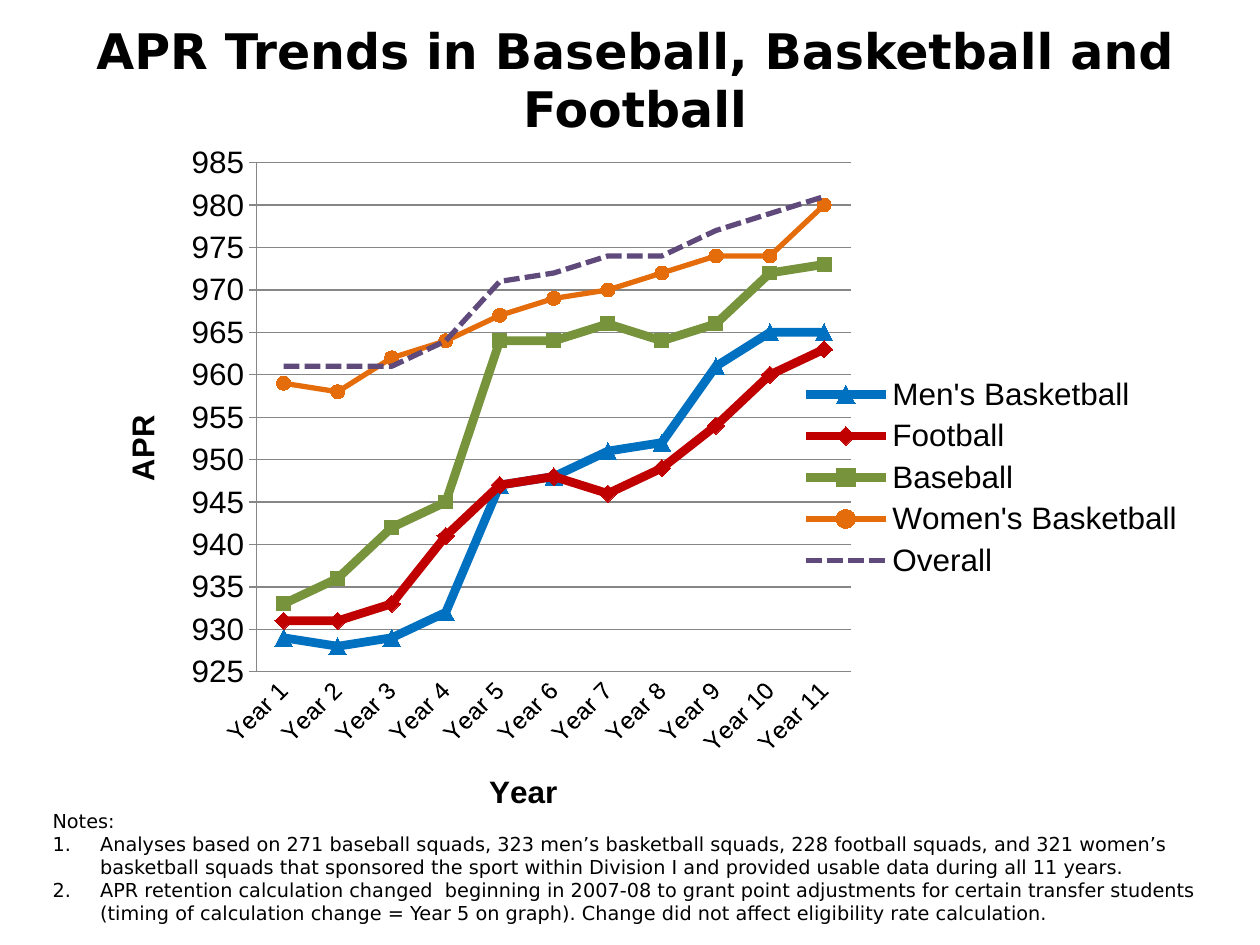
from dataclasses import dataclass

from lxml import etree
from pptx import Presentation
from pptx.chart.data import CategoryChartData
from pptx.dml.color import RGBColor
from pptx.enum.chart import XL_CHART_TYPE, XL_LEGEND_POSITION, XL_MARKER_STYLE, XL_TICK_MARK
from pptx.enum.dml import MSO_LINE
from pptx.enum.text import MSO_ANCHOR, MSO_AUTO_SIZE, PP_ALIGN
from pptx.oxml.ns import qn
from pptx.util import Cm, Pt

LINE_MARKERS = XL_CHART_TYPE.LINE_MARKERS
LEGEND_RIGHT = XL_LEGEND_POSITION.RIGHT
TRIANGLE = XL_MARKER_STYLE.TRIANGLE
DIAMOND = XL_MARKER_STYLE.DIAMOND
SQUARE = XL_MARKER_STYLE.SQUARE
CIRCLE = XL_MARKER_STYLE.CIRCLE
NO_MARKER = XL_MARKER_STYLE.NONE
TICK_NONE = XL_TICK_MARK.NONE
TICK_OUTSIDE = XL_TICK_MARK.OUTSIDE
SHORT_DASH = MSO_LINE.SQUARE_DOT
MIDDLE = MSO_ANCHOR.MIDDLE
CENTER = PP_ALIGN.CENTER
FIT_NONE = MSO_AUTO_SIZE.NONE
FIT_SHAPE = MSO_AUTO_SIZE.SHAPE_TO_FIT_TEXT


@dataclass(frozen=True)
class Theme:
    text_font: str = "DejaVu Sans"
    chart_font: str = "Arial"
    ink: str = "000000"
    grid: str = "868686"
    title_size: int = 28
    chart_size: int = 18
    category_size: int = 14
    note_size: int = 11


@dataclass(frozen=True)
class Trend:
    name: str
    values: tuple
    color: str
    width: int
    marker: XL_MARKER_STYLE
    marker_size: int = 8
    dashed: bool = False


TRENDS = [
    Trend("Men's Basketball", (929, 928, 929, 932, 947, 948, 951, 952, 961, 965, 965),
          "0070C0", 5, TRIANGLE, 10),
    Trend("Football", (931, 931, 933, 941, 947, 948, 946, 949, 954, 960, 963),
          "C00000", 5, DIAMOND, 10),
    Trend("Baseball", (933, 936, 942, 945, 964, 964, 966, 964, 966, 972, 973),
          "77933C", 5, SQUARE),
    Trend("Women's Basketball", (959, 958, 962, 964, 967, 969, 970, 972, 974, 974, 980),
          "E46C0A", 3, CIRCLE),
    Trend("Overall", (961, 961, 961, 964, 971, 972, 974, 974, 977, 979, 981),
          "604A7B", 3, NO_MARKER, dashed=True),
]
NOTES = [
    "Analyses based on 271 baseball squads, 323 men’s basketball squads, 228 football squads, "
    "and 321 women’s basketball squads that sponsored the sport within Division I and provided "
    "usable data during all 11 years.",
    "APR retention calculation changed  beginning in 2007-08 to grant point adjustments for "
    "certain transfer students (timing of calculation change = Year 5 on graph). Change did not "
    "affect eligibility rate calculation.",
]


def place_in_chart(chart, parent_query, index, **position):
    parent = chart.element.xpath(parent_query)[0]
    for old_layout in parent.findall(qn("c:layout")):
        parent.remove(old_layout)
    layout = etree.Element(qn("c:layout"))
    manual = etree.SubElement(layout, qn("c:manualLayout"))
    if parent.tag == qn("c:plotArea"):
        etree.SubElement(manual, qn("c:layoutTarget"), val="inner")
    for mode in ("xMode", "yMode"):
        etree.SubElement(manual, qn(f"c:{mode}"), val="edge")
    for name, value in position.items():
        etree.SubElement(manual, qn(f"c:{name}"), val=str(value))
    parent.insert(index, layout)


class SlideBuilder:
    def __init__(self, slide, theme):
        self.slide = slide
        self.theme = theme

    def style_font(self, font, name, size, bold=False):
        font.name = name
        font.size = Pt(size)
        font.bold = bold
        font.color.rgb = RGBColor.from_string(self.theme.ink)

    def add_title(self, text, left, top, width, height):
        title = self.slide.shapes.title
        title.left, title.top, title.width, title.height = left, top, width, height
        frame = title.text_frame
        frame.text = text
        frame.auto_size = FIT_NONE
        frame.vertical_anchor = MIDDLE
        paragraph = frame.paragraphs[0]
        paragraph.alignment = CENTER
        self.style_font(paragraph.font, self.theme.text_font, self.theme.title_size, True)

    def add_notes(self, heading, notes, left, top, width, height):
        box = self.slide.shapes.add_textbox(left, top, width, height)
        frame = box.text_frame
        frame.word_wrap = True
        frame.auto_size = FIT_SHAPE
        frame.margin_left = frame.margin_top = frame.margin_bottom = 0
        frame.margin_right = Cm(0.05)
        frame.text = "\n".join([heading, *notes])
        for number, paragraph in enumerate(frame.paragraphs):
            properties = paragraph._p.get_or_add_pPr()
            properties.set("marL", str(Cm(0.96)))
            properties.set("indent", str(-Cm(0.96)))
            if number:
                etree.SubElement(properties, qn("a:buAutoNum"), type="arabicPeriod")
            self.style_font(paragraph.font, self.theme.text_font, self.theme.note_size)

    def style_axis(self, axis, title, tick_mark, size):
        axis.major_tick_mark = tick_mark
        axis.minor_tick_mark = TICK_NONE
        axis.format.line.color.rgb = RGBColor.from_string(self.theme.grid)
        self.style_font(axis.tick_labels.font, self.theme.chart_font, size)
        frame = axis.axis_title.text_frame
        frame.text = title
        self.style_font(frame.paragraphs[0].font, self.theme.chart_font,
                        self.theme.chart_size, True)

    def style_trend(self, series, trend):
        color = RGBColor.from_string(trend.color)
        series.smooth = False
        series.format.line.color.rgb = color
        series.format.line.width = Pt(trend.width)
        if trend.dashed:
            series.format.line.dash_style = SHORT_DASH
        marker = series.marker
        marker.style = trend.marker
        if trend.marker != NO_MARKER:
            marker.size = trend.marker_size
            marker.format.fill.solid()
            marker.format.fill.fore_color.rgb = color
            marker.format.line.color.rgb = color

    def add_trend_chart(self, trends, left, top, width, height):
        data = CategoryChartData()
        data.categories = [f"Year {year}" for year in range(1, 12)]
        for trend in trends:
            data.add_series(trend.name, trend.values)
        chart = self.slide.shapes.add_chart(LINE_MARKERS, left, top, width, height, data).chart
        chart.has_title = False
        self.style_font(chart.font, self.theme.chart_font, self.theme.chart_size)
        chart.plots[0].vary_by_categories = False
        for series, trend in zip(chart.plots[0].series, trends):
            self.style_trend(series, trend)

        self.style_axis(chart.category_axis, "Year", TICK_NONE, self.theme.category_size)
        label_body = chart.element.xpath(".//c:catAx/c:txPr/a:bodyPr")[0]
        label_body.set("rot", "-2700000")
        values = chart.value_axis
        self.style_axis(values, "APR", TICK_OUTSIDE, self.theme.chart_size)
        values.minimum_scale, values.maximum_scale, values.major_unit = 925, 985, 5
        values.major_gridlines.format.line.color.rgb = RGBColor.from_string(self.theme.grid)

        chart.has_legend = True
        chart.legend.position = LEGEND_RIGHT
        chart.legend.include_in_layout = False
        self.style_font(chart.legend.font, self.theme.chart_font, self.theme.chart_size)
        place_in_chart(chart, ".//c:plotArea", 0, x=0.13, y=0.04, w=0.55, h=0.76)
        place_in_chart(chart, ".//c:catAx/c:title", 1, x=0.34, y=0.94)
        place_in_chart(chart, ".//c:valAx/c:title", 1, x=0, y=0.41)
        place_in_chart(chart, ".//c:legend", 1, x=0.63, y=0.35, w=0.36, h=0.32)


def main():
    deck = Presentation()
    deck.slide_width, deck.slide_height = Cm(25.4), Cm(19.05)
    page = SlideBuilder(deck.slides.add_slide(deck.slide_layouts[5]), Theme())
    page.add_title("APR Trends in Baseball, Basketball and Football",
                   Cm(1.27), Cm(0.42), Cm(23.06), Cm(2.34))
    page.add_trend_chart(TRENDS, Cm(2.34), Cm(2.74), Cm(21.79), Cm(13.77))
    page.add_notes("Notes:", NOTES, Cm(1.06), Cm(16.31), Cm(23.5), Cm(2.95))
    deck.save("out.pptx")


if __name__ == "__main__":
    main()
